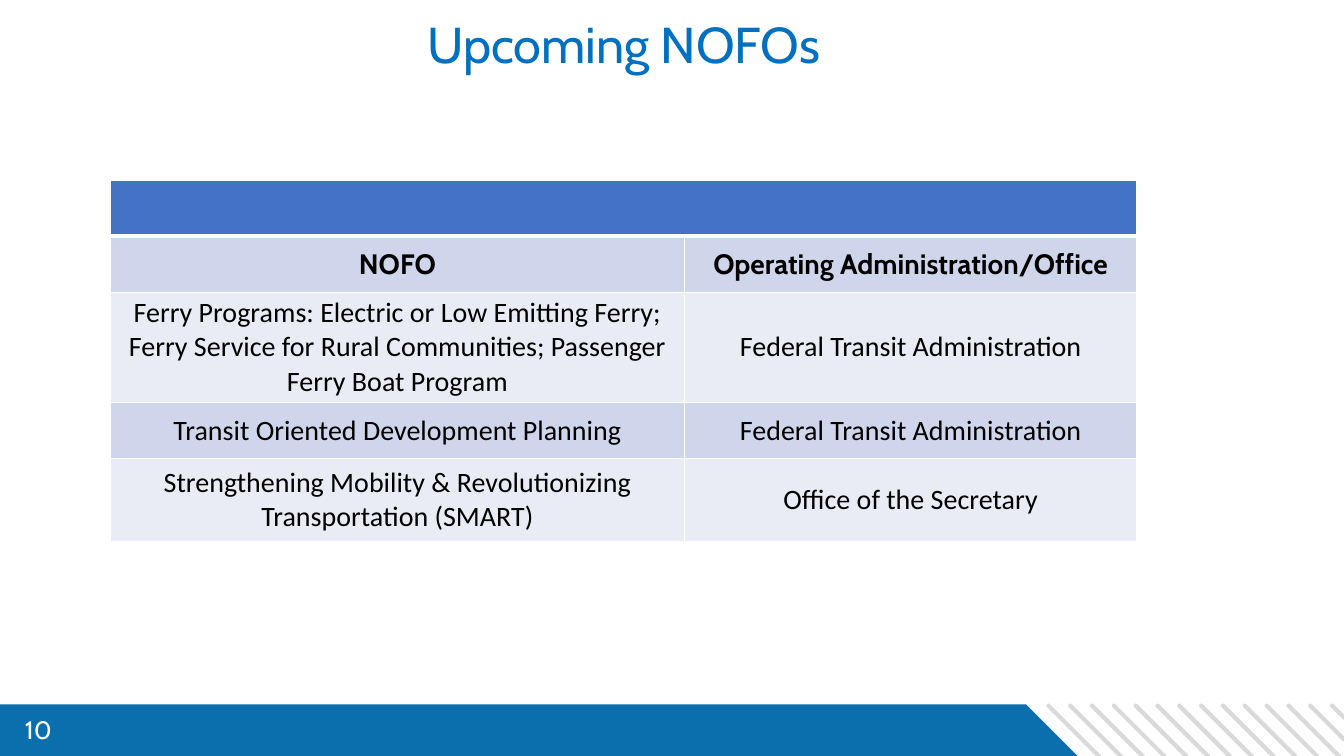
from dataclasses import dataclass

import lxml.etree
import pptx
import pptx.dml.color
import pptx.enum.shapes
import pptx.enum.text
import pptx.oxml
import pptx.oxml.ns
import pptx.util

Cm = pptx.util.Cm
RGB = pptx.dml.color.RGBColor
Align = pptx.enum.text.PP_ALIGN
Anchor = pptx.enum.text.MSO_ANCHOR
Preset = pptx.enum.shapes.MSO_SHAPE
qn = pptx.oxml.ns.qn


@dataclass(frozen=True)
class Theme:
    footer: str = "0B6FAD"
    stripe: str = "D9D9D9"
    title: str = "0070C0"
    header: str = "4472C4"
    dark_band: str = "CFD5EA"
    light_band: str = "E9EBF5"
    white: str = "FFFFFF"
    black: str = "000000"
    display_font: str = "Cabin"
    body_font: str = "Calibri"
    title_size: int = 36
    table_size: int = 20
    number_size: int = 18


@dataclass(frozen=True)
class Box:
    left: float
    top: float
    width: float
    height: float

    def emu(self) -> tuple:
        return Cm(self.left), Cm(self.top), Cm(self.width), Cm(self.height)


@dataclass(frozen=True)
class Style:
    font: str
    size: int
    color: str
    bold: bool = False
    align: Align = Align.CENTER


@dataclass(frozen=True)
class TableRow:
    height: float
    nofo: str
    office: str


THEME = Theme()
SLIDE_WIDTH, SLIDE_HEIGHT = 33.87, 19.05
FOOTER_TOP = 17.75
COLUMN_WIDTHS = (14.47, 11.4)
HEADER_HEIGHT = 1.4
ROWS = (
    TableRow(1.42, "NOFO", "Operating Administration/Office"),
    TableRow(2.77, "Ferry Programs: Electric or Low Emitting Ferry; Ferry Service for "
             "Rural Communities; Passenger Ferry Boat Program",
             "Federal Transit Administration"),
    TableRow(1.42, "Transit Oriented Development Planning",
             "Federal Transit Administration"),
    TableRow(2.08, "Strengthening Mobility & Revolutionizing Transportation (SMART)",
             "Office of the Secretary"),
)


def write(tf, text: str, style: Style) -> None:
    tf.text = text
    p = tf.paragraphs[0]
    p.alignment = style.align
    font = p.runs[0].font
    font.name = style.font
    font.size = pptx.util.Pt(style.size)
    font.bold = style.bold
    font.color.rgb = RGB.from_string(style.color)


def add_text(slide, box: Box, text: str, style: Style):
    tf = slide.shapes.add_textbox(*box.emu()).text_frame
    tf.word_wrap = True
    write(tf, text, style)
    return tf


def add_footer_shape(slide, preset: Preset, box: Box, rotation: float = 0) -> None:
    sp = slide.shapes.add_shape(preset, *box.emu())
    sp.shadow.inherit = False
    sp.fill.solid()
    sp.fill.fore_color.rgb = RGB.from_string(THEME.footer)
    sp.line.fill.background()
    sp.rotation = rotation


def add_stripes(slide) -> None:
    """Draw 45-degree stripes, cut off at the right slide edge."""
    first, gap, top, drop = 26.42, 0.55, 17.78, 1.28
    for i in range(14):
        x = first + i * gap
        run = min(drop, SLIDE_WIDTH - x)
        line = slide.shapes.add_connector(
            pptx.enum.shapes.MSO_CONNECTOR.STRAIGHT,
            Cm(x), Cm(top), Cm(x + run), Cm(top + run))
        line.line.color.rgb = RGB.from_string(THEME.stripe)
        line.line.width = pptx.util.Pt(3)
        sp_pr = line._element.spPr
        lxml.etree.SubElement(sp_pr, qn("a:effectLst"))
        sp_pr.find(qn("a:ln")).set("cap", "rnd")


def format_cell(cell, fill: str, bottom: int = 1) -> None:
    """Give a cell white borders (widths in points), then its fill."""
    tc_pr = cell._tc.get_or_add_tcPr()
    for side, width in (("L", 1), ("R", 1), ("T", 1), ("B", bottom)):
        ln = lxml.etree.SubElement(tc_pr, qn(f"a:ln{side}"), w=str(pptx.util.Pt(width)))
        solid = lxml.etree.SubElement(ln, qn("a:solidFill"))
        lxml.etree.SubElement(solid, qn("a:srgbClr"), val=THEME.white)
    cell.fill.solid()
    cell.fill.fore_color.rgb = RGB.from_string(fill)


def add_nofo_table(slide) -> None:
    heights = [HEADER_HEIGHT] + [row.height for row in ROWS]
    box = Box(2.78, 4.55, sum(COLUMN_WIDTHS), sum(heights))
    table = slide.shapes.add_table(len(heights), len(COLUMN_WIDTHS), *box.emu()).table
    table.horz_banding = False
    for column, width in zip(table.columns, COLUMN_WIDTHS):
        column.width = Cm(width)
    for row, height in zip(table.rows, heights):
        row.height = Cm(height)

    for cell in table.rows[0].cells:
        format_cell(cell, THEME.header, bottom=3)
    table.cell(0, 0).merge(table.cell(0, 1))

    for i, row in enumerate(ROWS):
        is_heading = i == 0
        font = THEME.display_font if is_heading else THEME.body_font
        style = Style(font, THEME.table_size, THEME.black, bold=is_heading)
        fill = THEME.light_band if i % 2 else THEME.dark_band
        for j, text in enumerate((row.nofo, row.office)):
            cell = table.cell(i + 1, j)
            format_cell(cell, fill)
            cell.margin_left = cell.margin_right = 0
            cell.margin_top = cell.margin_bottom = 0
            cell.vertical_anchor = Anchor.MIDDLE
            write(cell.text_frame, text, style)


def main() -> None:
    prs = pptx.Presentation()
    prs.slide_width, prs.slide_height = Cm(SLIDE_WIDTH), Cm(SLIDE_HEIGHT)
    slide = prs.slides.add_slide(prs.slide_layouts[6])

    add_footer_shape(slide, Preset.RECTANGLE, Box(0, FOOTER_TOP, 25.86, 1.31))
    add_stripes(slide)
    add_footer_shape(slide, Preset.ISOSCELES_TRIANGLE, Box(25.25, 18.26, 1.85, 0.94), 225)
    add_text(slide, Box(0.38, 17.88, 1.42, 1.02), "10",
             Style(THEME.display_font, THEME.number_size, THEME.white, align=Align.LEFT))

    title = add_text(slide, Box(0.86, 0.38, 29.72, 2.64), "Upcoming NOFOs",
                     Style(THEME.display_font, THEME.title_size, THEME.title))
    title.paragraphs[0].line_spacing = 0.9
    add_nofo_table(slide)
    prs.save("out.pptx")


if __name__ == "__main__":
    main()
